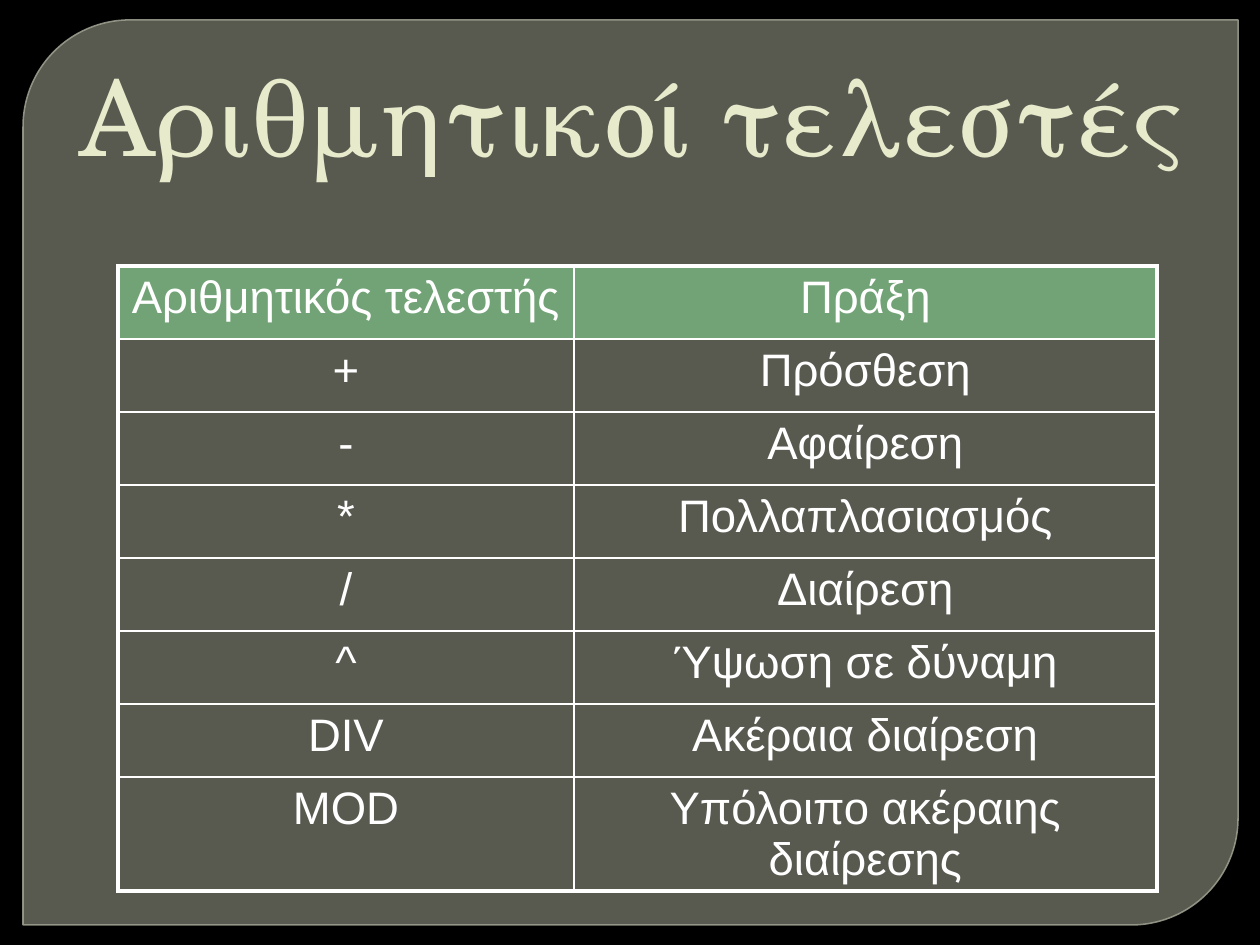
from dataclasses import dataclass

from lxml import etree
from pptx import Presentation
from pptx import util as u
from pptx.dml.color import RGBColor
from pptx.enum import shapes, text
from pptx.oxml.ns import qn

EMU_PER_PX = 914400 / 126


@dataclass(frozen=True)
class Theme:
    background: str = "000000"
    panel: str = "888B7B"
    panel_edge: str = "9DA090"
    title: str = "E7EACB"
    header: str = "72A376"
    table_ink: str = "FFFFFF"
    title_font: str = "TeX Gyre Schola"
    table_font: str = "Arial"
    title_size: int = 60
    table_size: int = 26
    outer_border: float = 2.25
    inner_border: float = 1


THEME = Theme()

OPERATORS = [
    ("Αριθμητικός τελεστής", "Πράξη"),
    ("+", "Πρόσθεση"),
    ("-", "Αφαίρεση"),
    ("*", "Πολλαπλασιασμός"),
    ("/", "Διαίρεση"),
    ("^", "Ύψωση σε δύναμη"),
    ("DIV", "Ακέραια διαίρεση"),
    ("MOD", "Υπόλοιπο ακέραιης διαίρεσης"),
]


def px(length):
    return u.Emu(round(length * EMU_PER_PX))


def box(*lengths):
    return [px(length) for length in lengths]


def paint(fill, color, opacity=100):
    fill.solid()
    fill.fore_color.rgb = RGBColor.from_string(color)
    if opacity < 100:
        clr = fill._xPr.find(".//" + qn("a:srgbClr"))
        etree.SubElement(clr, qn("a:alpha"), val=str(opacity * 1000))


def style_text(paragraph, align, font, size, color):
    paragraph.alignment = align
    for run in paragraph.runs:
        run.font.name = font
        run.font.size = u.Pt(size)
        run.font.bold = False
        run.font.color.rgb = RGBColor.from_string(color)


def add_panel(slide):
    panel = slide.shapes.add_shape(
        shapes.MSO_SHAPE.ROUND_2_DIAG_RECTANGLE, *box(23, 20, 1215, 905))
    panel.shadow.inherit = False
    panel.adjustments[0] = 0.118
    panel.adjustments[1] = 0
    paint(panel.fill, THEME.panel, 65)
    paint(panel.line.fill, THEME.panel_edge, 88)
    panel.line.width = u.Pt(0.87)


def add_title(slide, wording):
    frame = slide.shapes.add_textbox(*box(63, 35, 1134, 158)).text_frame
    frame.word_wrap = True
    frame.margin_left = 0
    frame.vertical_anchor = text.MSO_ANCHOR.MIDDLE
    heading = frame.paragraphs[0]
    heading.text = wording
    style_text(heading, text.PP_ALIGN.RIGHT, THEME.title_font,
               THEME.title_size, THEME.title)


def set_borders(cell, outer_sides):
    props = cell._tc.get_or_add_tcPr()
    for side in "LRTB":
        width = THEME.outer_border if side in outer_sides else THEME.inner_border
        edge = etree.SubElement(props, qn(f"a:ln{side}"), w=str(u.Pt(width)))
        solid = etree.SubElement(edge, qn("a:solidFill"))
        etree.SubElement(solid, qn("a:srgbClr"), val=THEME.table_ink)


def set_space_before(paragraph, percent):
    props = paragraph._p.get_or_add_pPr()
    before = etree.SubElement(props, qn("a:spcBef"))
    etree.SubElement(before, qn("a:spcPct"), val=str(percent * 1000))


def add_operator_table(slide, rows):
    column_widths = (456, 583)
    row_height = 73
    last_row, last_column = len(rows) - 1, len(column_widths) - 1
    table = slide.shapes.add_table(
        len(rows), len(column_widths),
        *box(118, 266, sum(column_widths), row_height * len(rows))).table
    table.first_row = table.horz_banding = False
    for column, width in zip(table.columns, column_widths):
        column.width = px(width)

    for r, row in enumerate(rows):
        table.rows[r].height = px(row_height)
        for c, wording in enumerate(row):
            cell = table.cell(r, c)
            label = cell.text_frame.paragraphs[0]
            label.text = wording
            style_text(label, text.PP_ALIGN.CENTER, THEME.table_font,
                       THEME.table_size, THEME.table_ink)
            set_space_before(label, 20)
            # Thick lines only around the outside of the table
            on_edge = {"L": c == 0, "R": c == last_column,
                       "T": r == 0, "B": r == last_row}
            set_borders(cell, [side for side, outer in on_edge.items() if outer])
            if r == 0:
                paint(cell.fill, THEME.header)
            else:
                cell.fill.background()


def main():
    deck = Presentation()
    deck.slide_width, deck.slide_height = box(1260, 945)
    slide = deck.slides.add_slide(deck.slide_layouts[6])
    paint(slide.background.fill, THEME.background)

    # Backdrop, operator table, heading
    add_panel(slide)
    add_operator_table(slide, OPERATORS)
    add_title(slide, "Αριθμητικοί τελεστές")
    deck.save("out.pptx")


if __name__ == "__main__":
    main()
